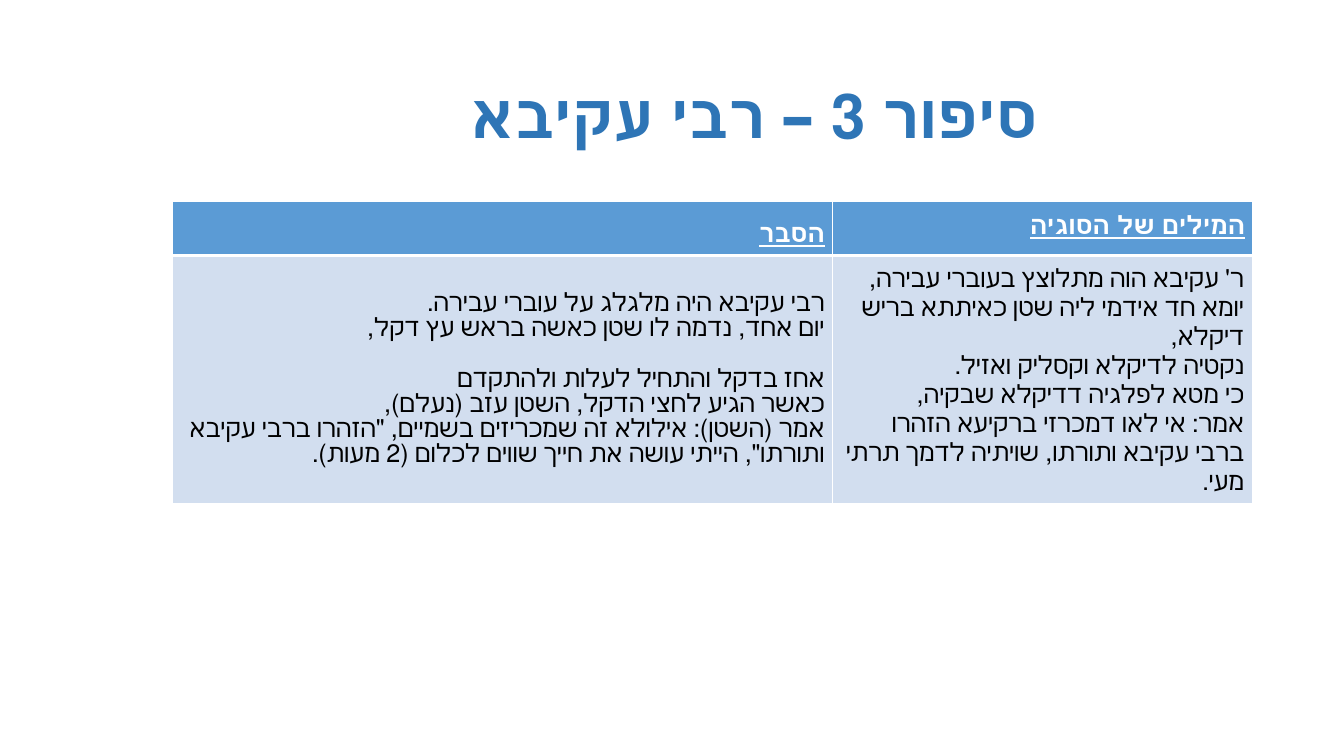
from lxml import etree
from pptx import Presentation
from pptx.dml.color import RGBColor
from pptx.enum.text import MSO_ANCHOR, PP_ALIGN
from pptx.oxml.ns import qn
from pptx.util import Inches, Pt

TOP, MIDDLE = MSO_ANCHOR.TOP, MSO_ANCHOR.MIDDLE
CENTER, RIGHT = PP_ALIGN.CENTER, PP_ALIGN.RIGHT
TITLE_ONLY = 5

WHITE, BLACK = "FFFFFF", "000000"
TITLE_BLUE, HEADER_BLUE, BODY_BLUE = "2E75B6", "5B9BD5", "D2DEEF"

COLUMN_WIDTHS = (6.55, 4.16)
ROW_HEIGHTS = (0.53, 2.45)
EXPLANATION = [
    "רבי עקיבא היה מלגלג על עוברי עבירה.",
    "יום אחד, נדמה לו שטן כאשה בראש עץ דקל,",
    "אחז בדקל והתחיל לעלות ולהתקדם",
    "כאשר הגיע לחצי הדקל, השטן עזב (נעלם),",
    "אמר (השטן): אילולא זה שמכריזים בשמיים, \"הזהרו ברבי עקיבא ותורתו\", "
    "הייתי עושה את חייך שווים לכלום (2 מעות).",
]
TALMUD_WORDS = [
    "ר' עקיבא הוה מתלוצץ בעוברי עבירה,",
    "יומא חד אידמי ליה שטן כאיתתא בריש דיקלא,",
    "נקטיה לדיקלא וקסליק ואזיל.",
    "כי מטא לפלגיה דדיקלא שבקיה,",
    "אמר: אי לאו דמכרזי ברקיעא הזהרו ברבי עקיבא ותורתו, שויתיה לדמך תרתי מעי.",
]


def color(hex_string):
    return RGBColor.from_string(hex_string)


def write_hebrew(text_frame, lines, size, font_name, font_color, align=RIGHT,
                 bold=False, underline=False, spacing=1.0):
    """Fill a frame with right-to-left paragraphs, one for each line."""
    text_frame.text = "\n".join(lines)
    for paragraph in text_frame.paragraphs:
        paragraph.alignment = align
        paragraph.line_spacing = spacing
        paragraph.space_before = Pt(0)
        paragraph._p.get_or_add_pPr().set("rtl", "1")
        for run in paragraph.runs:
            run.font.size = Pt(size)
            run.font.name = font_name
            run.font.bold = bold
            run.font.underline = underline
            run.font.color.rgb = color(font_color)


def add_title(slide, text):
    title = slide.shapes.title
    title.left, title.top = Inches(2.54), Inches(0.4)
    title.width, title.height = Inches(9.88), Inches(1.45)
    title.text_frame.vertical_anchor = MIDDLE
    write_hebrew(title.text_frame, [text], 44, "Cambria", TITLE_BLUE,
                 align=CENTER, bold=True)


def set_borders(cell, bottom_width):
    properties = cell._tc.get_or_add_tcPr()
    widths = {"a:lnL": 1, "a:lnR": 1, "a:lnT": 1, "a:lnB": bottom_width}
    for position, (tag, width) in enumerate(widths.items()):
        line = etree.Element(qn(tag), w=str(Pt(width)))
        fill = etree.SubElement(line, qn("a:solidFill"))
        etree.SubElement(fill, qn("a:srgbClr"), val=WHITE)
        properties.insert(position, line)


def format_cell(cell, lines, fill, anchor=MIDDLE, margins=(0.08, 0.08),
                bottom_border=1, **text_style):
    cell.fill.solid()
    cell.fill.fore_color.rgb = color(fill)
    cell.vertical_anchor = anchor
    cell.margin_left = cell.margin_right = Inches(margins[0])
    cell.margin_top = cell.margin_bottom = Inches(margins[1])
    set_borders(cell, bottom_border)
    write_hebrew(cell.text_frame, lines, 18, "Calibri", **text_style)


def add_story_table(slide):
    table = slide.shapes.add_table(
        2, 2, Inches(1.71), Inches(2), Inches(sum(COLUMN_WIDTHS)),
        Inches(sum(ROW_HEIGHTS))).table
    for column, width in zip(table.columns, COLUMN_WIDTHS):
        column.width = Inches(width)
    for row, height in zip(table.rows, ROW_HEIGHTS):
        row.height = Inches(height)

    header = dict(fill=HEADER_BLUE, bottom_border=3, font_color=WHITE,
                  bold=True, underline=True, spacing=1.5)
    format_cell(table.cell(0, 0), ["הסבר"], **header)
    format_cell(table.cell(0, 1), ["המילים של הסוגיה"], anchor=TOP,
                margins=(0.07, 0), **header)

    body = dict(fill=BODY_BLUE, font_color=BLACK)
    format_cell(table.cell(1, 0), EXPLANATION, **body)
    format_cell(table.cell(1, 1), TALMUD_WORDS, spacing=1.15, **body)
    second_part = table.cell(1, 0).text_frame.paragraphs[2]
    second_part.space_before = Pt(18)


def main():
    presentation = Presentation()
    presentation.slide_width = Inches(13.33)
    presentation.slide_height = Inches(7.5)
    slide = presentation.slides.add_slide(presentation.slide_layouts[TITLE_ONLY])
    add_title(slide, "סיפור 3 – רבי עקיבא")
    add_story_table(slide)
    presentation.save("out.pptx")


if __name__ == "__main__":
    main()
